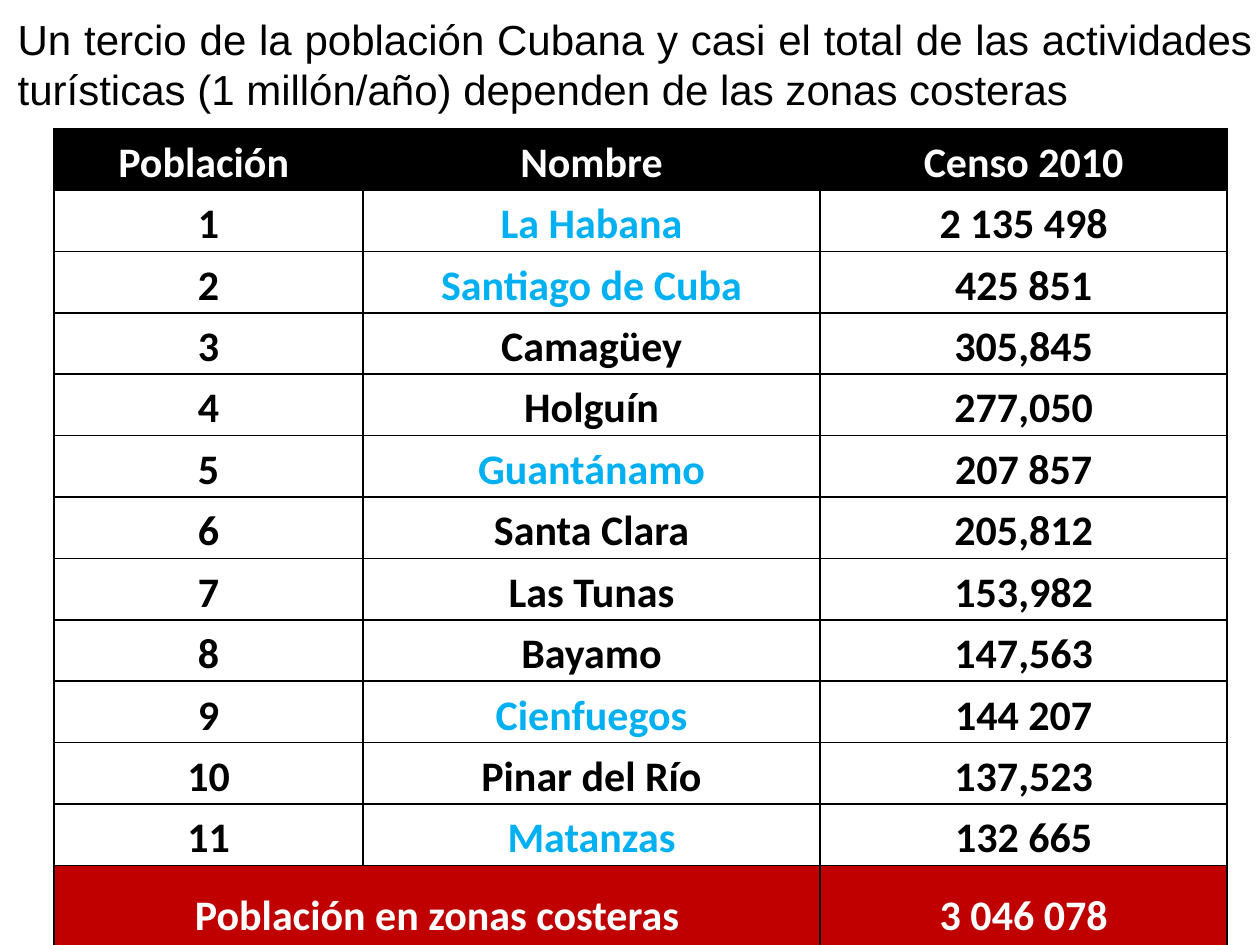
from lxml.etree import SubElement
from pptx import Presentation
from pptx.dml.color import RGBColor
from pptx.enum.text import MSO_ANCHOR as Anchor, MSO_AUTO_SIZE as Fit, PP_ALIGN as Align
from pptx.oxml.ns import qn
from pptx.util import Inches, Pt

BLACK = RGBColor(0x00, 0x00, 0x00)
WHITE = RGBColor(0xFF, 0xFF, 0xFF)
BLUE = RGBColor(0x00, 0xB0, 0xF0)
RED = RGBColor(0xC0, 0x00, 0x00)

HEAD = ("Población ", "Nombre", "Censo 2010")
CITIES = [
    ("La Habana", "2 135 498"),
    ("Santiago de Cuba", "425 851"),
    ("Camagüey", "305,845"),
    ("Holguín", "277,050"),
    ("Guantánamo", "207 857"),
    ("Santa Clara", "205,812"),
    ("Las Tunas", "153,982"),
    ("Bayamo", "147,563"),
    ("Cienfuegos", "144 207"),
    ("Pinar del Río", "137,523"),
    ("Matanzas", "132 665"),
]
COAST = {"La Habana", "Santiago de Cuba", "Guantánamo", "Cienfuegos", "Matanzas"}
TOTAL = ("Población en zonas costeras", "", "3 046 078")

PAD = Inches(0.01)
CELL = {
    "vertical_anchor": Anchor.MIDDLE,
    "margin_left": PAD, "margin_right": PAD,
    "margin_top": PAD, "margin_bottom": PAD,
}
PARA = {"alignment": Align.CENTER, "line_spacing": 1.15}
FONT = {"name": "Calibri", "size": Pt(24), "bold": True}


def style(item, form):
    for key, value in form.items():
        setattr(item, key, value)


def border(cell):
    props = cell._tc.get_or_add_tcPr()
    for side in ("lnL", "lnR", "lnT", "lnB"):
        line = SubElement(props, qn("a:" + side), w=str(Pt(1)))
        fill = SubElement(line, qn("a:solidFill"))
        SubElement(fill, qn("a:srgbClr"), val=str(BLACK))


deck = Presentation()
deck.slide_width, deck.slide_height = Inches(10), Inches(7.5)
slide = deck.slides.add_slide(deck.slide_layouts[5])

# Title
title = slide.shapes.title
style(title, {"left": Inches(0.04), "top": Inches(0.05),
              "width": Inches(10), "height": Inches(0.91)})
frame = title.text_frame
frame.text = ("Un tercio de la población Cubana y casi el total de las actividades "
              "turísticas (1 millón/año) dependen de las zonas costeras")
style(frame, {"word_wrap": True, "auto_size": Fit.NONE, "vertical_anchor": Anchor.MIDDLE})
para = frame.paragraphs[0]
para.alignment = Align.JUSTIFY
style(para.font, {"name": "Arial", "size": Pt(24), "bold": False})
para.font.color.rgb = BLACK

# Census table
rows = [HEAD]
rows += [(str(n), *city) for n, city in enumerate(CITIES, 1)]
rows.append(TOTAL)
last = len(rows) - 1
table = slide.shapes.add_table(len(rows), len(HEAD), Inches(0.43), Inches(1.02),
                               Inches(9.31), Inches(6.39)).table
table.horz_banding = False
for col, width in zip(table.columns, (2.45, 3.63, 3.23)):
    col.width = Inches(width)
for row in table.rows:
    row.height = Inches(0.47)
table.rows[last].height = Inches(0.75)
table.cell(last, 0).merge(table.cell(last, 1))

# Cells: dark header, plain cities with coastal names in blue, red total
bands = {0: BLACK, last: RED}
for r, row in enumerate(rows):
    for c, text in enumerate(row):
        cell = table.cell(r, c)
        style(cell, CELL)
        border(cell)
        if r in bands:
            cell.fill.solid()
            cell.fill.fore_color.rgb = bands[r]
            color = WHITE
        else:
            cell.fill.background()
            color = BLUE if text in COAST else BLACK
        if cell.is_spanned:
            continue
        cell.text = text
        para = cell.text_frame.paragraphs[0]
        style(para, PARA)
        font = para.runs[0].font
        style(font, FONT)
        font.color.rgb = color

deck.save("out.pptx")
